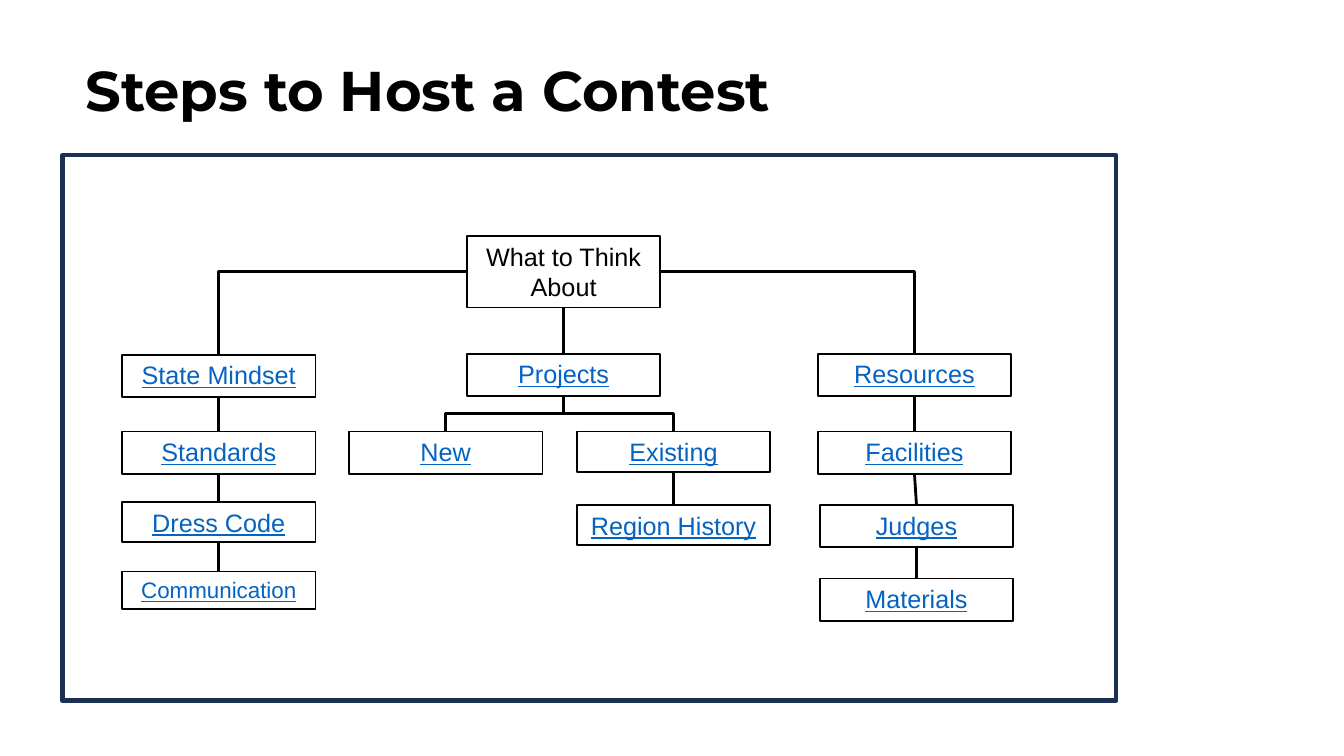
from pptx import Presentation
from pptx.dml.color import RGBColor
from pptx.enum.shapes import MSO_CONNECTOR as Connector, MSO_SHAPE as Shape
from pptx.enum.text import MSO_ANCHOR as Anchor, MSO_AUTO_SIZE as AutoSize, PP_ALIGN as Align
from pptx.oxml.ns import qn
from pptx.oxml.xmlchemy import OxmlElement
from pptx.util import Inches, Pt

BLACK = RGBColor(0x00, 0x00, 0x00)
WHITE = RGBColor(0xFF, 0xFF, 0xFF)
NAVY = RGBColor(0x1C, 0x30, 0x52)
LINK_BLUE = RGBColor(0x05, 0x63, 0xC1)

TOP, LEFT, BOTTOM, RIGHT = range(4)
STEP_WIDTH = 1.92

ROOT = "What to Think About"
STEPS = [
    (ROOT, 4.01, 0.8, 0.71),
    ("State Mindset", 0.59, 1.98, 0.42),
    ("Standards", 0.59, 2.74, 0.42),
    ("Dress Code", 0.59, 3.44, 0.4),
    ("Communication", 0.59, 4.13, 0.37),
    ("Projects", 4.01, 1.97, 0.42),
    ("New", 2.84, 2.74, 0.42),
    ("Existing", 5.1, 2.74, 0.4),
    ("Region History", 5.1, 3.47, 0.4),
    ("Resources", 7.49, 1.97, 0.42),
    ("Facilities", 7.49, 2.74, 0.42),
    ("Judges", 7.51, 3.47, 0.42),
    ("Materials", 7.51, 4.2, 0.42),
]
CHAINS = [
    ["State Mindset", "Standards", "Dress Code", "Communication"],
    [ROOT, "Projects"],
    ["Existing", "Region History"],
    ["Resources", "Facilities", "Judges", "Materials"],
]


def add_title(slide, left, top, width, height):
    box = slide.shapes.add_textbox(Inches(left), Inches(top), Inches(width), Inches(height))
    frame = box.text_frame
    frame.word_wrap = True
    frame.vertical_anchor = Anchor.MIDDLE
    paragraph = frame.paragraphs[0]
    paragraph.line_spacing = 0.9
    run = paragraph.add_run()
    run.text = "Steps to Host a Contest"
    run.font.name = "Montserrat"
    run.font.size = Pt(40)
    run.font.bold = True
    run.font.color.rgb = BLACK


def add_rectangle(slide, left, top, width, height, line_color, line_width):
    shape = slide.shapes.add_shape(
        Shape.RECTANGLE, Inches(left), Inches(top), Inches(width), Inches(height))
    shape.shadow.inherit = False
    shape.line.color.rgb = line_color
    shape.line.width = Pt(line_width)
    return shape


def add_step(slide, text, left, top, height):
    shape = add_rectangle(slide, left, top, STEP_WIDTH, height, BLACK, 1.25)
    shape.fill.background()
    frame = shape.text_frame
    frame.word_wrap = True
    frame.auto_size = AutoSize.SHAPE_TO_FIT_TEXT
    frame.vertical_anchor = Anchor.TOP
    paragraph = frame.paragraphs[0]
    paragraph.alignment = Align.CENTER
    run = paragraph.add_run()
    run.text = text
    run.font.name = "Arial"
    run.font.size = Pt(16 if text == "Communication" else 18)
    run.font.underline = text != ROOT
    run.font.color.rgb = BLACK if text == ROOT else LINK_BLUE
    return shape


def join(slide, start, end, start_side=BOTTOM, kind=Connector.STRAIGHT):
    connector = slide.shapes.add_connector(kind, 0, 0, 0, 0)
    connector.begin_connect(start, start_side)
    connector.end_connect(end, TOP)
    connector.line.color.rgb = BLACK
    connector.line.width = Pt(2)
    connector._element.spPr.append(OxmlElement("a:effectLst"))
    return connector


def join_corner(slide, start, end, start_side):
    connector = join(slide, start, end, start_side, Connector.ELBOW)
    connector._element.spPr.find(qn("a:prstGeom")).set("prst", "bentConnector2")


def join_fork(slide, start, end):
    connector = join(slide, start, end, kind=Connector.ELBOW)
    goes_right = connector.end_x > connector.begin_x
    center_x = connector.left + connector.width // 2
    center_y = connector.top + connector.height // 2
    span, drop = connector.width, connector.height
    connector.left, connector.top = center_x - drop // 2, center_y - span // 2
    connector.width, connector.height = drop, span
    transform = connector._element.spPr.find(qn("a:xfrm"))
    transform.set("rot", str((270 if goes_right else 90) * 60000))
    transform.set("flipH", "1" if goes_right else "0")


def add_step_chart(slide, left, top, width, height):
    panel = add_rectangle(slide, left, top, width, height, NAVY, 3)
    panel.fill.solid()
    panel.fill.fore_color.rgb = WHITE
    steps = {text: add_step(slide, text, left + x, top + y, step_height)
             for text, x, y, step_height in STEPS}
    for chain in CHAINS:
        for upper, lower in zip(chain, chain[1:]):
            join(slide, steps[upper], steps[lower])
    join_corner(slide, steps[ROOT], steps["State Mindset"], LEFT)
    join_corner(slide, steps[ROOT], steps["Resources"], RIGHT)
    for project in ("New", "Existing"):
        join_fork(slide, steps["Projects"], steps[project])


def main():
    presentation = Presentation()
    presentation.slide_width = Inches(13.33)
    presentation.slide_height = Inches(7.5)
    slide = presentation.slides.add_slide(presentation.slide_layouts[6])
    add_step_chart(slide, 0.62, 1.54, 10.45, 5.41)
    add_title(slide, 0.75, 0.4, 10.9, 1.05)
    presentation.save("out.pptx")


if __name__ == "__main__":
    main()
